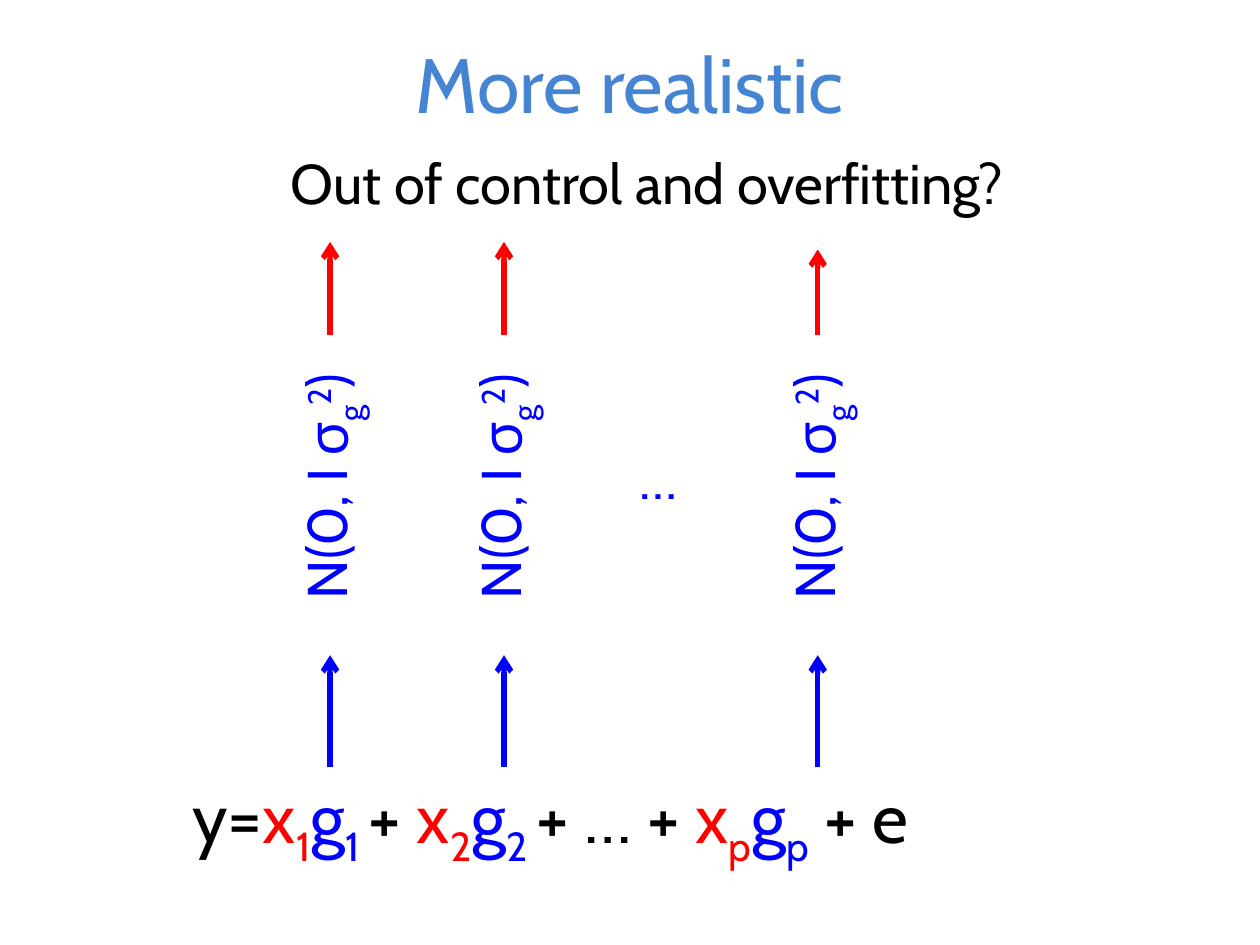
from lxml.etree import SubElement
from pptx import Presentation
from pptx.dml.color import RGBColor
from pptx.enum.shapes import MSO_CONNECTOR as Connector
from pptx.enum.text import MSO_ANCHOR as Anchor, PP_ALIGN as Align
from pptx.oxml.ns import qn
from pptx.util import Inches, Pt

WIDTH, HEIGHT = 10, 7.5
BLACK, RED, BLUE, TITLE_BLUE = "000000", "FF0000", "0000FF", "4584D3"
SUB, SUPER = -25, 30

# Centre of each effect column, and where its red arrow ends
COLUMNS = [(2.62, 1.92), (4, 1.92), (6.49, 1.98)]
PRIOR = [("N(0, I σ", BLUE, 0), ("g", BLUE, SUB), ("2", BLUE, SUPER), (")", BLUE, 0)]


def colour(value):
    return RGBColor.from_string(value)


def place(shape, box):
    for name, value in zip(("left", "top", "width", "height"), box):
        setattr(shape, name, Inches(value))


def write(shape, spans, size, align=Align.CENTER, anchor=Anchor.MIDDLE):
    """Fill a shape with one paragraph of (text, colour, baseline) spans."""
    frame = shape.text_frame
    for name, value in {"word_wrap": True, "vertical_anchor": anchor}.items():
        setattr(frame, name, value)
    para = frame.paragraphs[0]
    para.alignment = align
    for text, ink, baseline in spans:
        span = para.add_run()
        span.text = text
        for name, value in {"name": "Cabin", "size": Pt(size)}.items():
            setattr(span.font, name, value)
        span.font.color.rgb = colour(ink)
        if baseline:
            span._r.get_or_add_rPr().set("baseline", str(baseline * 1000))


def add_text(page, box, spans, size, rotation=0, **layout):
    shape = page.shapes.add_textbox(*map(Inches, box))
    shape.rotation = rotation
    write(shape, spans, size, **layout)


def add_up_arrow(page, x, bottom, top, ink):
    arrow = page.shapes.add_connector(Connector.STRAIGHT, *map(Inches, (x, bottom, x, top)))
    arrow.line.width = Pt(3)
    arrow.line.color.rgb = colour(ink)
    SubElement(arrow.line._get_or_add_ln(), qn("a:tailEnd"), type="arrow")
    SubElement(arrow._element.spPr, qn("a:effectLst"))


def add_heading(page):
    title = page.shapes.title
    place(title, (0.5, -0.03, WIDTH - 1, 1.37))
    write(title, [("More realistic", TITLE_BLUE, 0)], 44)
    add_text(page, (0.69, 1.13, 8.89, 0.64),
             [("Out of control and overfitting?", BLACK, 0)], 32, anchor=Anchor.TOP)


def add_effect_column(page, centre, arrow_top):
    """Blue arrow, upright prior and red arrow above one effect."""
    add_up_arrow(page, centre, 6.09, 5.2, BLUE)
    width, height = 2.38, 0.5
    add_text(page, (centre - width / 2, 3.61, width, height), PRIOR, 32, rotation=270)
    add_up_arrow(page, centre, 2.66, arrow_top, RED)


def effect_term(index, gap=" "):
    return [("x", RED, 0), (index, RED, SUB), ("g", BLUE, 0), (index + gap, BLUE, SUB)]


def add_equation(page, box):
    spans = [("y=", BLACK, 0), *effect_term("1"), ("+ ", BLACK, 0), *effect_term("2"),
             ("+ … + ", BLACK, 0), *effect_term("p", gap=""), (" + e", BLACK, 0)]
    add_text(page, box, spans, 40, align=Align.LEFT, anchor=Anchor.TOP)


def main():
    deck = Presentation()
    deck.slide_width, deck.slide_height = Inches(WIDTH), Inches(HEIGHT)
    page = deck.slides.add_slide(deck.slide_layouts[5])
    page.background.fill.solid()
    page.background.fill.fore_color.rgb = colour("FFFFFF")
    add_heading(page)
    add_equation(page, (1.43, 6.09, 7.4, 0.77))
    for centre, arrow_top in COLUMNS:
        add_effect_column(page, centre, arrow_top)
    add_text(page, (4.7, 3.54, 1.06, 0.5), [("…", BLUE, 0)], 32)
    deck.save("out.pptx")


if __name__ == "__main__":
    main()
